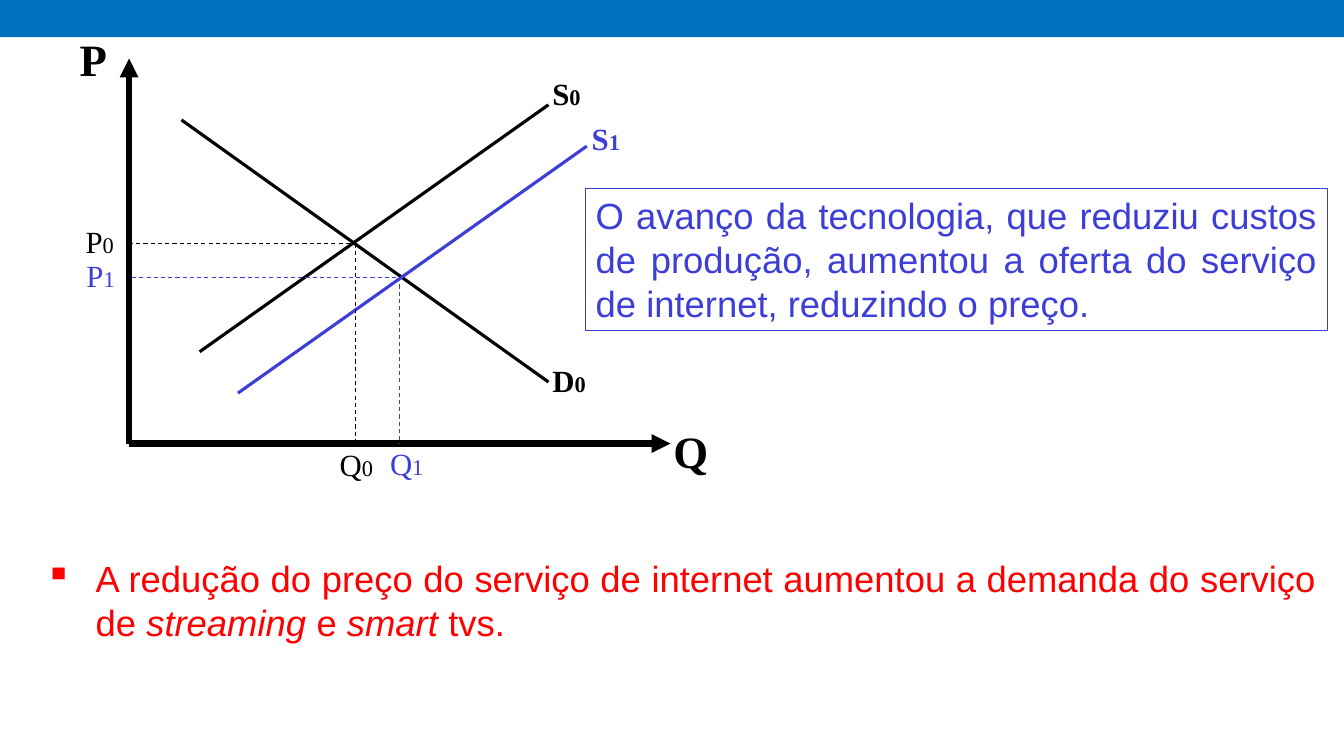
from lxml import etree
from pptx import Presentation
from pptx.dml.color import RGBColor
from pptx.enum import dml, shapes, text
from pptx.oxml import ns
from pptx.util import Inches, Pt

BLACK, BLUE, RED, BAR = "000000", "3D3DD7", "FF0000", "0070C0"
SERIF, SANS = "Times New Roman", "Arial"


def color(value):
    return RGBColor.from_string(value)


def add_line(slide, start, end, line_color, width, dashed=False, arrow=False):
    points = [Inches(value) for value in (*start, *end)]
    line = slide.shapes.add_connector(shapes.MSO_CONNECTOR.STRAIGHT, *points)
    line.line.color.rgb = color(line_color)
    line.line.width = Pt(width)
    if dashed:
        line.line.dash_style = dml.MSO_LINE.DASH
    if arrow:
        outline = line.line._get_or_add_ln()
        etree.SubElement(outline, ns.qn("a:tailEnd"), type="triangle")
    etree.SubElement(line._element.spPr, ns.qn("a:effectLst"))


def style_paragraph(paragraph, size, font_name, font_color, bold=False):
    paragraph.alignment = text.PP_ALIGN.JUSTIFY
    paragraph.font.size = Pt(size)
    paragraph.font.name = font_name
    paragraph.font.bold = bold
    paragraph.font.color.rgb = color(font_color)


def add_text_box(slide, left, top, width, height):
    box = slide.shapes.add_textbox(*map(Inches, (left, top, width, height)))
    box.text_frame.word_wrap = True
    return box


def add_label(slide, left, top, letter, index, label_color, bold=False):
    """Curve or axis value label: a letter with a smaller index."""
    box = add_text_box(slide, left, top, 1.21 if bold else 1.04, 0.47)
    paragraph = box.text_frame.paragraphs[0]
    style_paragraph(paragraph, 22, SERIF, label_color, bold)
    paragraph.add_run().text = letter
    small = paragraph.add_run()
    small.text = index
    small.font.size = Pt(16)


def add_axis_name(slide, left, top, name):
    box = add_text_box(slide, left, top, 0.35, 0.64)
    paragraph = box.text_frame.paragraphs[0]
    paragraph.text = name
    style_paragraph(paragraph, 32, SERIF, BLACK, True)


def add_bar(slide):
    bar = slide.shapes.add_shape(shapes.MSO_SHAPE.RECTANGLE, Inches(0),
                                 Inches(-0.03), Inches(13.33), Inches(0.4))
    bar.shadow.inherit = False
    bar.fill.solid()
    bar.fill.fore_color.rgb = color(BAR)
    bar.line.fill.background()


def add_explanation(slide, content):
    box = add_text_box(slide, 5.81, 1.87, 7.36, 1.41)
    box.line.color.rgb = color(BLUE)
    box.line.width = Pt(0.75)
    paragraph = box.text_frame.paragraphs[0]
    paragraph.text = content
    style_paragraph(paragraph, 26, SANS, BLUE)


def add_bullet(slide, runs):
    box = add_text_box(slide, 0.35, 5.47, 12.82, 0.98)
    paragraph = box.text_frame.paragraphs[0]
    properties = paragraph._p.get_or_add_pPr()
    properties.set("marL", str(Inches(0.5)))
    properties.set("indent", str(-Inches(0.5)))
    etree.SubElement(properties, ns.qn("a:buChar"), char="▪")
    style_paragraph(paragraph, 26, SANS, RED)
    for content, italic in runs:
        run = paragraph.add_run()
        run.text = content
        run.font.italic = italic


def add_equilibrium(slide, origin, point, guide_color):
    """Dashed guides from an equilibrium point to both axes."""
    (axis_x, axis_y), (x, y) = origin, point
    add_line(slide, (axis_x, y), point, guide_color, 0.75, dashed=True)
    add_line(slide, point, (x, axis_y), guide_color, 0.75, dashed=True)


def main():
    presentation = Presentation()
    presentation.slide_width = Inches(13.33)
    presentation.slide_height = Inches(7.5)
    slide = presentation.slides.add_slide(presentation.slide_layouts[6])
    add_bar(slide)

    # Axes
    origin = (1.28, 4.4)
    for tip in ((1.28, 0.58), (6.65, 4.4)):
        add_line(slide, origin, tip, BLACK, 4.5, arrow=True)
    add_axis_name(slide, 0.69, 0.27, "P")
    add_axis_name(slide, 6.58, 4.15, "Q")

    # Demand and supply curves
    for start, end, curve_color in (
        ((1.8, 1.19), (5.44, 3.79), BLACK),
        ((1.98, 3.49), (5.44, 1.04), BLACK),
        ((2.36, 3.9), (5.82, 1.45), BLUE),
    ):
        add_line(slide, start, end, curve_color, 2.25)

    # Equilibrium points
    add_equilibrium(slide, origin, (3.53, 2.42), BLACK)
    add_equilibrium(slide, (1.31, 4.4), (3.96, 2.75), BLUE)

    # Curve names and axis values
    for left, top, letter, index, label_color, bold in (
        (5.38, 0.69, "S", "0", BLACK, True),
        (5.38, 3.54, "D", "0", BLACK, True),
        (5.77, 1.14, "S", "1", BLUE, True),
        (0.75, 2.16, "P", "0", BLACK, False),
        (3.27, 4.37, "Q", "0", BLACK, False),
        (0.76, 2.5, "P", "1", BLUE, False),
        (3.77, 4.36, "Q", "1", BLUE, False),
    ):
        add_label(slide, left, top, letter, index, label_color, bold)

    # Explanation and conclusion
    add_explanation(slide, "O avanço da tecnologia, que reduziu custos de "
                           "produção, aumentou a oferta do serviço de "
                           "internet, reduzindo o preço.")
    add_bullet(slide, (
        ("A redução do preço do serviço de internet aumentou a demanda "
         "do serviço de ", False),
        ("streaming ", True),
        ("e ", False),
        ("smart ", True),
        ("tvs.", False),
    ))
    presentation.save("out.pptx")


if __name__ == "__main__":
    main()
